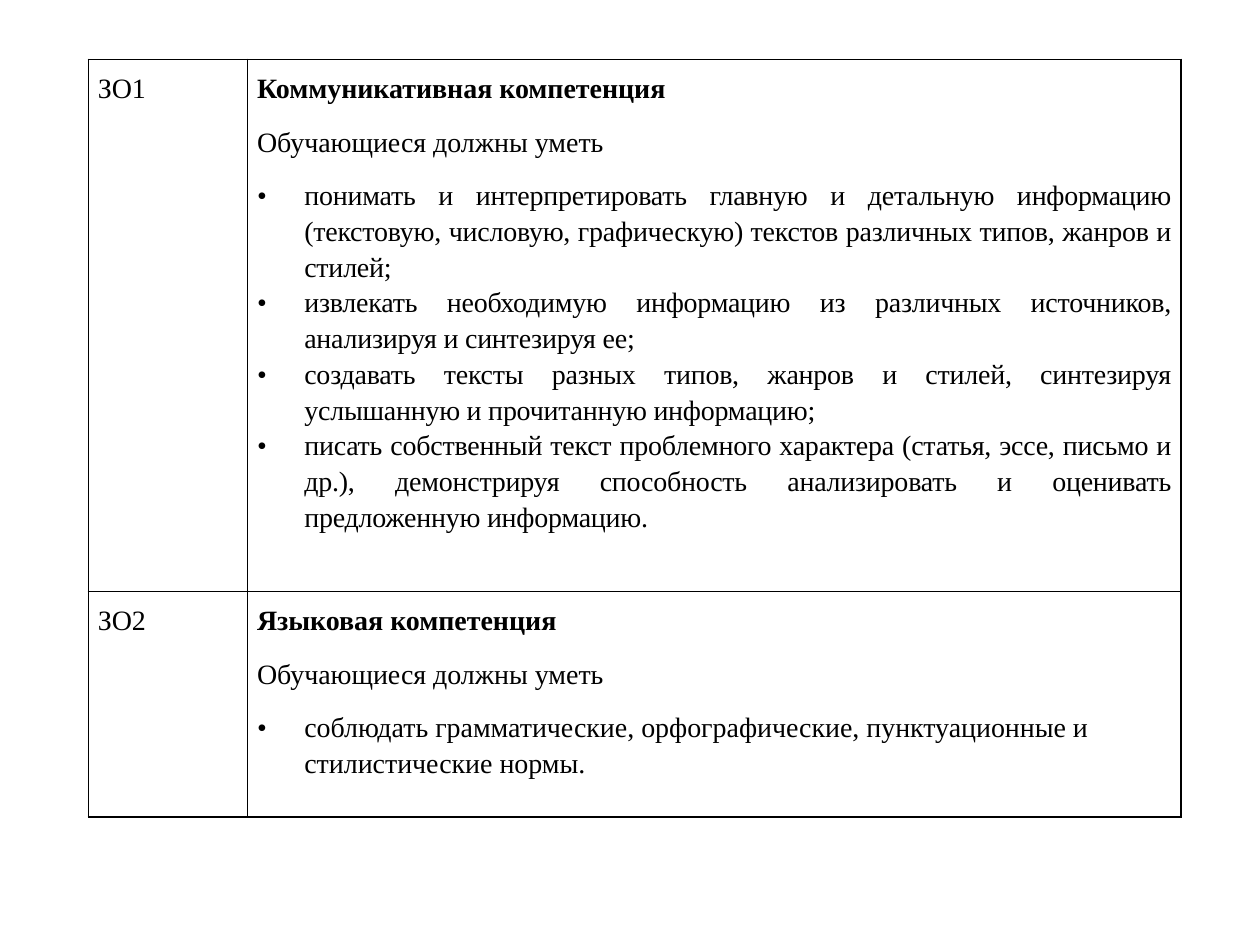
from dataclasses import dataclass

from lxml.etree import SubElement as add_node
from pptx import Presentation
from pptx.dml.color import RGBColor
from pptx.enum.text import PP_ALIGN as Align
from pptx.oxml.ns import qn
from pptx.util import Pt


@dataclass(frozen=True)
class Theme:
    font: str = "Times New Roman"
    size: float = 16
    ink: str = "000000"
    border: float = 1
    inset_x: float = 5.4
    inset_y: float = 5.6
    line_spacing: float = 1.15
    space_after: float = 10
    indent: float = 27


@dataclass(frozen=True)
class Competence:
    code: str
    name: str
    skills: tuple[str, ...]
    height: float
    justified: bool = False


THEME = Theme()
INTRO = "Обучающиеся должны уметь"
LEFT, TOP = 50.5, 34
COLUMN_WIDTHS = (91, 533.5)
COMPETENCES = (
    Competence(
        "ЗО1",
        "Коммуникативная компетенция",
        (
            "понимать и интерпретировать главную и детальную информацию "
            "(текстовую, числовую, графическую) текстов различных типов, жанров и стилей;",
            "извлекать необходимую информацию из различных источников, "
            "анализируя и синтезируя ее;",
            "создавать тексты разных типов, жанров и стилей, "
            "синтезируя услышанную и прочитанную информацию;",
            "писать собственный текст проблемного характера (статья, эссе, письмо и др.), "
            "демонстрируя способность анализировать и оценивать предложенную информацию.",
        ),
        304,
        justified=True,
    ),
    Competence(
        "ЗО2",
        "Языковая компетенция",
        (
            "соблюдать грамматические, орфографические, пунктуационные "
            "и стилистические нормы.",
        ),
        129,
    ),
)


def style_cell(cell) -> None:
    cell.margin_left = cell.margin_right = Pt(THEME.inset_x)
    cell.margin_top = cell.margin_bottom = Pt(THEME.inset_y)
    properties = cell._tc.get_or_add_tcPr()
    for side in ("lnL", "lnR", "lnT", "lnB"):
        line = add_node(properties, qn(f"a:{side}"), w=str(Pt(THEME.border)))
        fill = add_node(line, qn("a:solidFill"))
        add_node(fill, qn("a:srgbClr"), val=THEME.ink)
    cell.fill.background()


def style_para(para, bold: bool = False, space_after: float = THEME.space_after) -> None:
    para.line_spacing = THEME.line_spacing
    para.space_before = Pt(0)
    para.space_after = Pt(space_after)
    for span in para.runs:
        span.font.name = THEME.font
        span.font.size = Pt(THEME.size)
        span.font.bold = bold
        span.font.color.rgb = RGBColor.from_string(THEME.ink)


def style_bullet(para, justified: bool) -> None:
    style_para(para, space_after=0)
    para.alignment = Align.JUSTIFY if justified else Align.LEFT
    properties = para._p.get_or_add_pPr()
    properties.set("marL", str(Pt(THEME.indent)))
    properties.set("indent", str(-Pt(THEME.indent)))
    add_node(properties, qn("a:buFont"), typeface=THEME.font)
    add_node(properties, qn("a:buChar"), char="•")
    if justified:
        for span in para.runs:
            span.font._element.set("spc", "-10")


def fill_row(table, index: int, item: Competence) -> None:
    table.rows[index].height = Pt(item.height)
    code_cell, text_cell = table.cell(index, 0), table.cell(index, 1)
    style_cell(code_cell)
    style_cell(text_cell)
    code_cell.text_frame.text = item.code
    style_para(code_cell.text_frame.paragraphs[0])
    text_cell.text_frame.text = "\n".join((item.name, INTRO, *item.skills))
    heading, intro, *bullets = text_cell.text_frame.paragraphs
    style_para(heading, bold=True)
    style_para(intro)
    for bullet in bullets:
        style_bullet(bullet, item.justified)


def main() -> None:
    deck = Presentation()
    deck.slide_width, deck.slide_height = Pt(720), Pt(540)
    page = deck.slides.add_slide(deck.slide_layouts[6])
    table = page.shapes.add_table(
        len(COMPETENCES),
        len(COLUMN_WIDTHS),
        Pt(LEFT),
        Pt(TOP),
        Pt(sum(COLUMN_WIDTHS)),
        Pt(sum(item.height for item in COMPETENCES)),
    ).table
    table.first_row = table.horz_banding = False
    for column, width in zip(table.columns, COLUMN_WIDTHS):
        column.width = Pt(width)
    for index, item in enumerate(COMPETENCES):
        fill_row(table, index, item)
    deck.save("out.pptx")


if __name__ == "__main__":
    main()
